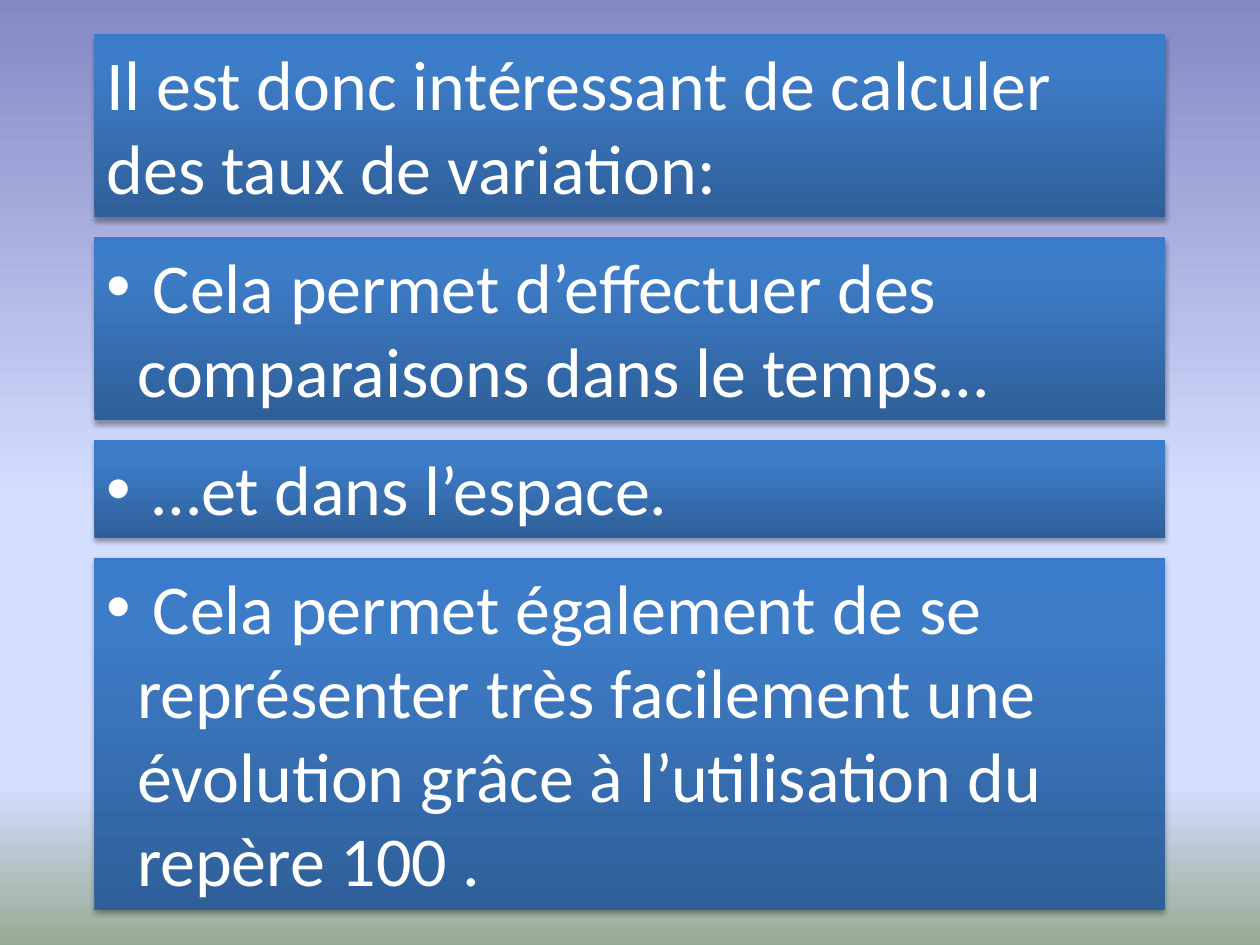
from lxml.etree import SubElement
from pptx import Presentation
from pptx.dml.color import RGBColor
from pptx.enum.shapes import MSO_SHAPE
from pptx.enum.text import MSO_ANCHOR, MSO_AUTO_SIZE, PP_ALIGN
from pptx.oxml.ns import qn
from pptx.util import Inches, Pt

PANELS = [
    ("Il est donc intéressant de calculer des taux de variation:", 2, False),
    (" Cela permet d’effectuer des comparaisons dans le temps…", 2, True),
    (" …et dans l’espace.", 1, True),
    (" Cela permet également de se représenter très facilement une évolution "
     "grâce à l’utilisation du repère 100 .", 4, True),
]

WHITE = RGBColor(0xFF, 0xFF, 0xFF)
BLACK = RGBColor(0, 0, 0)
DUSK = RGBColor(0x84, 0x88, 0xC4)
SKY = RGBColor(0xD4, 0xDE, 0xFF)
GRASS = RGBColor(0x96, 0xAB, 0x94)
DEEP_BLUE = RGBColor(0x2F, 0x5F, 0x99)
MID_BLUE = RGBColor(0x3D, 0x7C, 0xC7)
TOP_BLUE = RGBColor(0x3A, 0x7C, 0xCB)

BACKGROUND_STOPS = [(0, DUSK), (53, SKY), (83, SKY), (100, GRASS)]
PANEL_STOPS = [(0, DEEP_BLUE), (80, MID_BLUE), (100, TOP_BLUE)]

WIDTH, HEIGHT = 10, 7.5
MARGIN, TOP, GAP = 0.75, 0.27, 0.16
LINE_HEIGHT, PADDING = 0.67, 0.11
HANGING = 0.24


def add_node(parent, tag, **attributes):
    return SubElement(parent, qn(tag), {key: str(value) for key, value in attributes.items()})


def set_gradient(fill, owner, stops, angle):
    fill.gradient()
    gradient = next(owner.iter(qn("a:gradFill")))
    for child in list(gradient):
        gradient.remove(child)
    stop_list = add_node(gradient, "a:gsLst")
    for position, color in stops:
        stop = add_node(stop_list, "a:gs", pos=position * 1000)
        add_node(stop, "a:srgbClr", val=color)
    add_node(gradient, "a:lin", ang=angle * 60000, scaled=0)


def add_shadow(panel):
    panel.shadow.inherit = False
    effects = next(panel.element.iter(qn("a:effectLst")))
    shadow = add_node(effects, "a:outerShdw", blurRad=Pt(3.1), dist=Pt(1.8),
                      dir=90 * 60000, rotWithShape=0)
    color = add_node(shadow, "a:srgbClr", val=BLACK)
    add_node(color, "a:alpha", val=35000)


def add_bullet(para):
    properties = para._p.get_or_add_pPr()
    properties.set("marL", str(Inches(HANGING)))
    properties.set("indent", str(-Inches(HANGING)))
    add_node(properties, "a:buFont", typeface="Arial")
    add_node(properties, "a:buChar", char="•")


def add_panel(page, text, top, height, bulleted):
    panel = page.shapes.add_shape(MSO_SHAPE.RECTANGLE, Inches(MARGIN), Inches(top),
                                  Inches(WIDTH - 2 * MARGIN), Inches(height))
    set_gradient(panel.fill, panel.element, PANEL_STOPS, 270)
    panel.line.fill.background()
    add_shadow(panel)
    frame = panel.text_frame
    frame.word_wrap = True
    frame.auto_size = MSO_AUTO_SIZE.SHAPE_TO_FIT_TEXT
    frame.vertical_anchor = MSO_ANCHOR.TOP
    para = frame.paragraphs[0]
    para.text = text
    para.alignment = PP_ALIGN.LEFT
    para.font.name, para.font.size = "Calibri", Pt(40)
    para.font.color.rgb = WHITE
    if bulleted:
        add_bullet(para)


def main():
    deck = Presentation()
    deck.slide_width, deck.slide_height = Inches(WIDTH), Inches(HEIGHT)
    page = deck.slides.add_slide(deck.slide_layouts[6])
    set_gradient(page.background.fill, page.element, BACKGROUND_STOPS, 90)
    top = TOP
    for text, lines, bulleted in PANELS:
        height = lines * LINE_HEIGHT + PADDING
        add_panel(page, text, top, height, bulleted)
        top += height + GAP
    deck.save("out.pptx")


if __name__ == "__main__":
    main()
